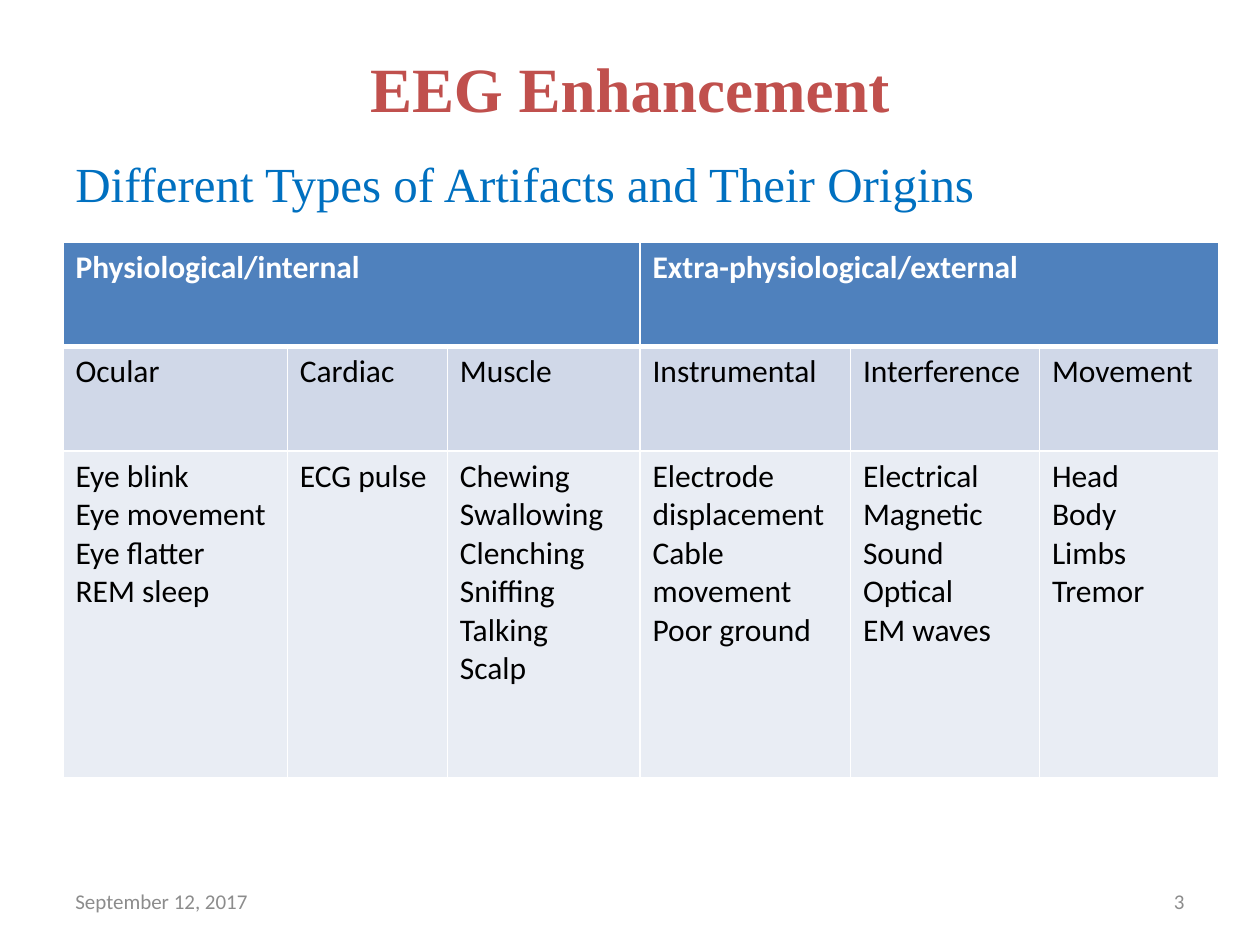
from lxml.etree import SubElement
from pptx import Presentation
from pptx.dml.color import RGBColor
from pptx.enum.text import MSO_ANCHOR, PP_ALIGN
from pptx.oxml.ns import qn
from pptx.util import Inches, Pt

WHITE = RGBColor(0xFF, 0xFF, 0xFF)
BLACK = RGBColor(0x00, 0x00, 0x00)
RED = RGBColor(0xC0, 0x50, 0x4D)
BLUE = RGBColor(0x00, 0x70, 0xC0)
GRAY = RGBColor(0x8C, 0x8C, 0x8C)
HEADER = RGBColor(0x4F, 0x81, 0xBD)
BAND = RGBColor(0xD0, 0xD8, 0xE8)
LIGHT = RGBColor(0xE9, 0xED, 0xF4)

GROUPS = ["Physiological/internal", "Extra-physiological/external"]
ARTIFACTS = {
    "Ocular": ["Eye blink", "Eye movement", "Eye flatter", "REM sleep"],
    "Cardiac": ["ECG pulse"],
    "Muscle": ["Chewing", "Swallowing", "Clenching", "Sniffing", "Talking", "Scalp"],
    "Instrumental": ["Electrode displacement", "Cable movement", "Poor ground"],
    "Interference": ["Electrical", "Magnetic", "Sound", "Optical", "EM waves"],
    "Movement": ["Head", "Body", "Limbs", "Tremor"],
}
COLUMN_WIDTHS = [1.78, 1.27, 1.53, 1.67, 1.5, 1.42]
ROW_HEIGHTS = [0.83, 0.83, 2.59]


class Deck:
    heading_font = "Times New Roman"
    body_font = "Calibri"

    def __init__(self, width, height):
        self.prs = Presentation()
        self.prs.slide_width = Inches(width)
        self.prs.slide_height = Inches(height)
        self.s = self.prs.slides.add_slide(self.prs.slide_layouts[6])

    def style(self, p, font, size, color, bold=False):
        p.font.name = font
        p.font.size = Pt(size)
        p.font.color.rgb = color
        p.font.bold = bold

    def text(self, box, text, font, size, color, bold=False,
             align=PP_ALIGN.LEFT, anchor=MSO_ANCHOR.MIDDLE, before=0):
        tf = self.s.shapes.add_textbox(*map(Inches, box)).text_frame
        tf.word_wrap = True
        tf.vertical_anchor = anchor
        p = tf.paragraphs[0]
        p.text = text
        p.alignment = align
        p.space_before = Pt(before)
        self.style(p, font, size, color, bold)

    def table(self, left, top, widths, heights):
        table = self.s.shapes.add_table(
            len(heights), len(widths), Inches(left), Inches(top),
            Inches(sum(widths)), Inches(sum(heights))).table
        for column, width in zip(table.columns, widths):
            column.width = Inches(width)
        for row, height in zip(table.rows, heights):
            row.height = Inches(height)
        return table

    def borders(self, cell, top, bottom):
        tcPr = cell._tc.get_or_add_tcPr()
        for side, width in (("L", 1), ("R", 1), ("T", top), ("B", bottom)):
            ln = SubElement(tcPr, qn(f"a:ln{side}"), w=str(Pt(width)))
            fill = SubElement(ln, qn("a:solidFill"))
            SubElement(fill, qn("a:srgbClr"), val=str(WHITE))

    def cell(self, cell, lines, fill, color=BLACK, bold=False, top=1, bottom=1):
        self.borders(cell, top, bottom)
        cell.fill.solid()
        cell.fill.fore_color.rgb = fill
        cell.text = "\n".join(lines)
        for p in cell.text_frame.paragraphs:
            self.style(p, self.body_font, 18, color, bold)

    def save(self):
        self.prs.save("out.pptx")


def main():
    deck = Deck(10, 7.5)
    deck.text((0.5, 0.3, 9, 0.78), "EEG Enhancement", deck.heading_font, 36, RED,
              bold=True, align=PP_ALIGN.CENTER)
    deck.text((0.5, 1.17, 9, 5.5), "Different Types of Artifacts and Their Origins",
              deck.heading_font, 28, BLUE, align=PP_ALIGN.JUSTIFY,
              anchor=MSO_ANCHOR.TOP, before=3.6)

    table = deck.table(0.5, 1.92, COLUMN_WIDTHS, ROW_HEIGHTS)
    span = len(ARTIFACTS) // len(GROUPS)
    for col, (kind, examples) in enumerate(ARTIFACTS.items()):
        group = [GROUPS[col // span]] if col % span == 0 else []
        deck.cell(table.cell(0, col), group, HEADER, WHITE, bold=True, bottom=3)
        deck.cell(table.cell(1, col), [kind], BAND, top=3)
        deck.cell(table.cell(2, col), examples, LIGHT)
    for first in range(0, len(ARTIFACTS), span):
        table.cell(0, first).merge(table.cell(0, first + span - 1))

    deck.text((0.5, 6.95, 2.33, 0.4), "September 12, 2017", deck.body_font, 12, GRAY)
    deck.text((7.17, 6.95, 2.33, 0.4), "3", deck.body_font, 12, GRAY,
              align=PP_ALIGN.RIGHT)
    deck.save()


if __name__ == "__main__":
    main()
